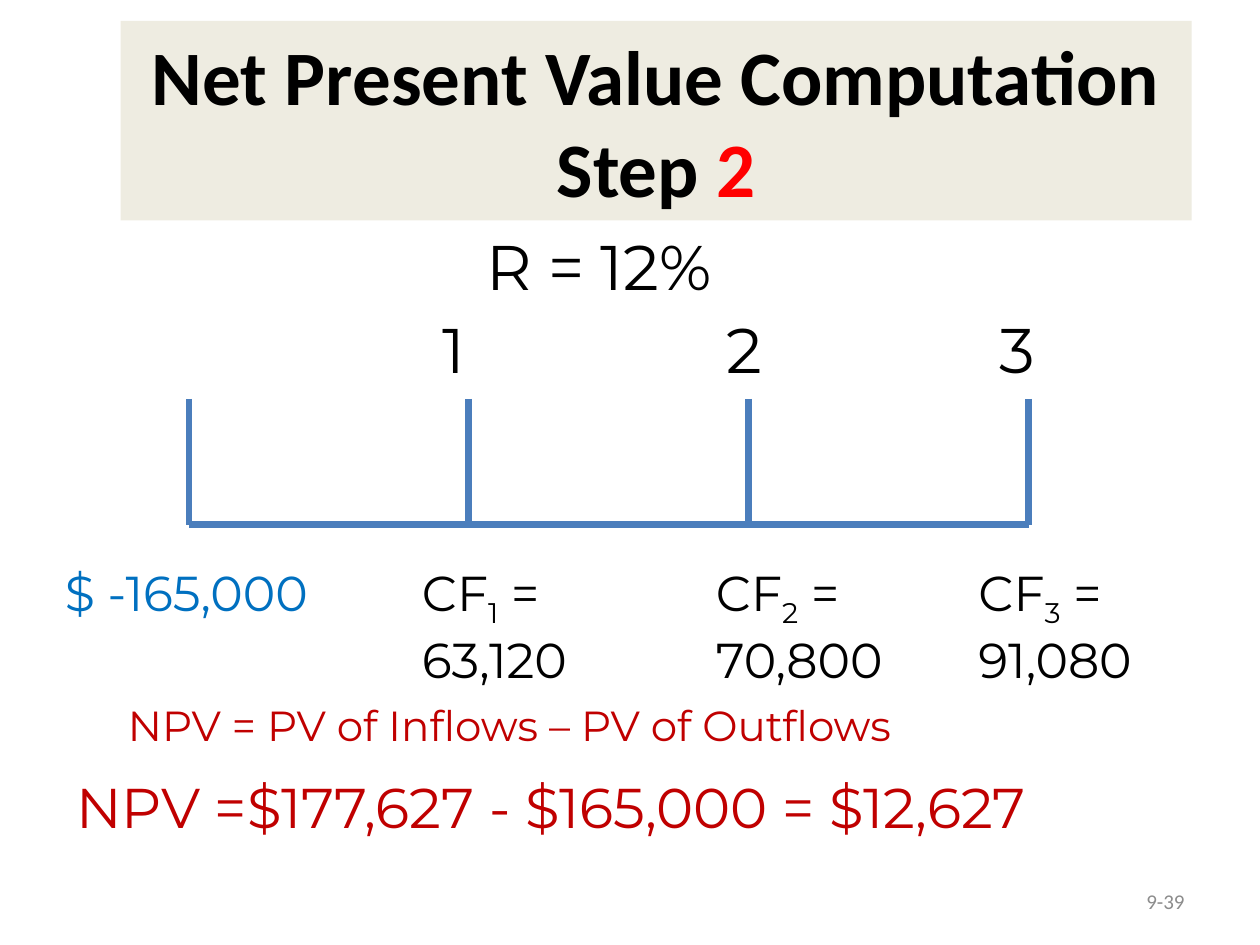
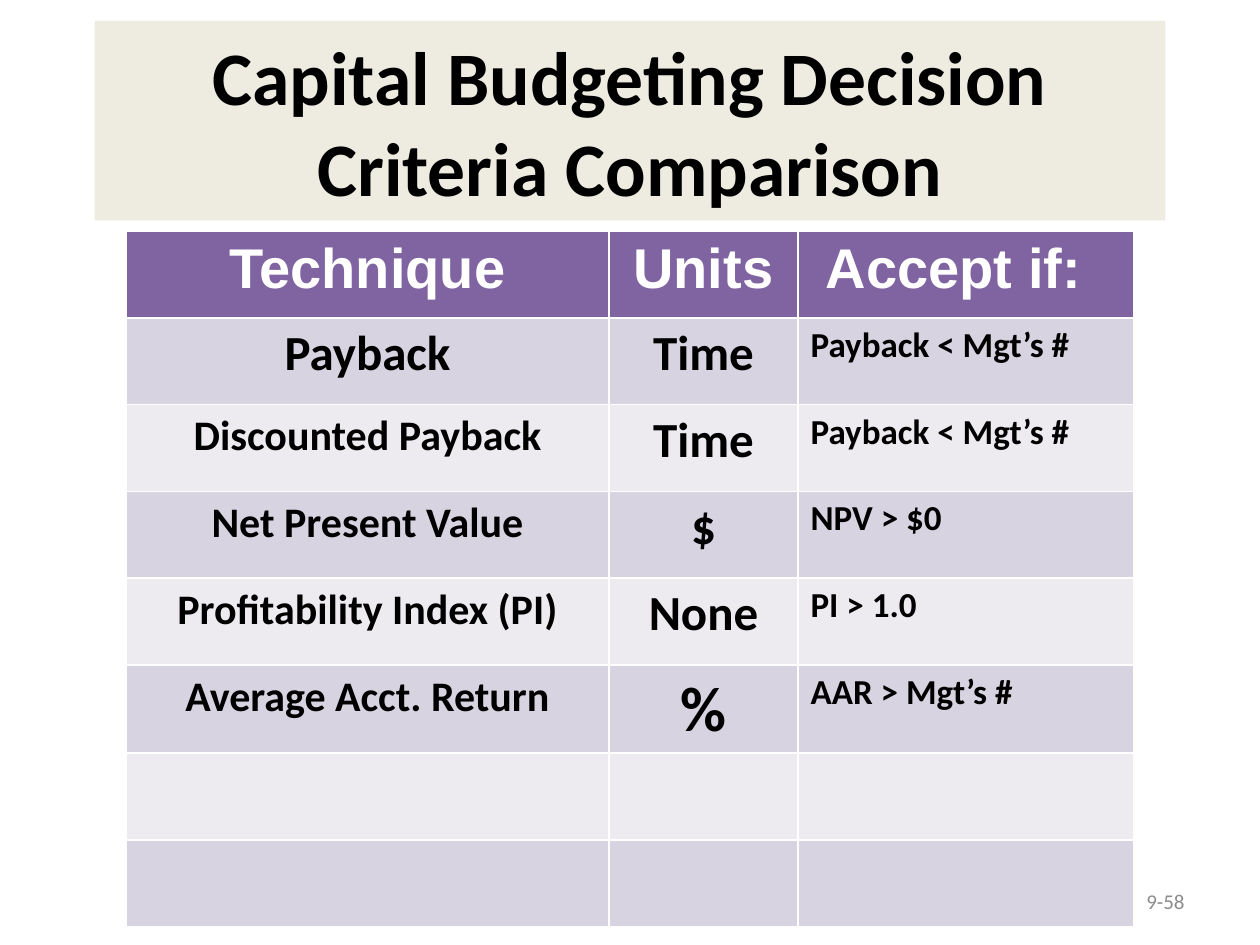
from pptx import Presentation
from pptx.dml.color import RGBColor
from pptx.enum.shapes import MSO_CONNECTOR
from pptx.enum.text import MSO_ANCHOR, MSO_AUTO_SIZE, PP_ALIGN
from pptx.oxml.ns import qn
from pptx.util import Pt
from lxml import etree

LEFT, MID, RIGHT = PP_ALIGN.LEFT, PP_ALIGN.CENTER, PP_ALIGN.RIGHT
TOP, CENTER = MSO_ANCHOR.TOP, MSO_ANCHOR.MIDDLE
NO_FIT = MSO_AUTO_SIZE.NONE
STRAIGHT = MSO_CONNECTOR.STRAIGHT

BLACK = RGBColor(0x00, 0x00, 0x00)
WHITE = RGBColor(0xFF, 0xFF, 0xFF)
RED = RGBColor(0xFF, 0x00, 0x00)
CRIMSON = RGBColor(0xC0, 0x00, 0x00)
BLUE = RGBColor(0x00, 0x70, 0xC0)
STEEL = RGBColor(0x4B, 0x7E, 0xBC)
GRAY = RGBColor(0x8C, 0x8C, 0x8C)
CREAM = RGBColor(0xEE, 0xEC, 0xE1)
PURPLE = RGBColor(0x80, 0x64, 0xA2)
BANDS = RGBColor(0xD8, 0xD3, 0xE0), RGBColor(0xED, 0xEA, 0xF0)

HEAD = {"name": "Calibri", "size": Pt(44), "bold": True, "color": BLACK}
BODY = {"name": "Montserrat", "size": Pt(28), "color": BLACK}
NUMBER = {"name": "Calibri", "size": Pt(12), "color": GRAY}
CELL = {"name": "Calibri", "size": Pt(20), "bold": True, "color": BLACK}
TOP_CELL = {"name": "Arial", "size": Pt(32), "bold": True, "color": WHITE}


def place(shape, box):
    for key, value in zip(("left", "top", "width", "height"), box):
        setattr(shape, key, Pt(value))


def write(para, text, style, **extra):
    """Add a run, formatted by the style and any changes to it."""
    run = para.add_run()
    run.text = text
    for key, value in {**style, **extra}.items():
        if key == "color":
            run.font.color.rgb = value
        else:
            setattr(run.font, key, value)
    return run


class Deck:
    def __init__(self):
        self.show = Presentation()
        self.show.slide_width, self.show.slide_height = Pt(720), Pt(540)
        self.slide = None

    def page(self, left, number, parts, size=44):
        """Start a slide with its title band and page number."""
        self.slide = self.show.slides.add_slide(self.show.slide_layouts[5])
        title = self.slide.shapes.title
        place(title, (left, 12, 612, 114))
        title.fill.solid()
        title.fill.fore_color.rgb = CREAM
        frame = title.text_frame
        frame.auto_size, frame.vertical_anchor = NO_FIT, CENTER
        para = frame.paragraphs[0]
        para.alignment = MID
        for text, color in parts:
            write(para, text, HEAD, size=Pt(size), color=color)
        self.text((516, 500.5, 168, 28.75), number, NUMBER, RIGHT, CENTER)

    def text(self, box, text, style=BODY, align=LEFT, anchor=TOP, **extra):
        frame = self.slide.shapes.add_textbox(*map(Pt, box)).text_frame
        frame.word_wrap, frame.vertical_anchor = True, anchor
        para = frame.paragraphs[0]
        para.alignment = align
        write(para, text, style, **extra)
        return para

    def flow(self, left, width, step, cash):
        """Add a cash flow with its period as a subscript."""
        para = self.text((left, 318, width, 75), "CF")
        sub = write(para, str(step), BODY)
        sub._r.get_or_add_rPr().set("baseline", "-25000")
        write(para, f" = {cash}", BODY)

    def line(self, *ends):
        line = self.slide.shapes.add_connector(STRAIGHT, *map(Pt, ends))
        line.line.color.rgb, line.line.width = STEEL, Pt(4)
        etree.SubElement(line._element.spPr, qn("a:effectLst"))

    def table(self, box, widths, rows):
        grid = self.slide.shapes.add_table(
            len(rows), len(widths), *map(Pt, box)).table
        for col, width in zip(grid.columns, widths):
            col.width = Pt(width)
        for i, row in enumerate(rows):
            grid.rows[i].height = Pt(box[3] / len(rows))
            for j in range(len(widths)):
                cell = grid.cell(i, j)
                cell.fill.solid()
                cell.fill.fore_color.rgb = BANDS[(i - 1) % 2] if i else PURPLE
                if row:
                    text, size = row[j]
                    para = cell.text_frame.paragraphs[0]
                    para.alignment = MID if j < 2 else LEFT
                    write(para, text, CELL if i else TOP_CELL, size=Pt(size))
        return grid


def value_slide(deck):
    deck.page(69, "9-39", [("Net Present Value Computation Step ", BLACK),
                           ("2", RED)])
    deck.text((270.75, 126.75, 216, 51), "R = 12%", size=Pt(36))
    deck.text((30, 318, 174, 41), "$ -165,000", color=BLUE)

    start, gap, top, base = 108, 160, 228, 300
    deck.line(start, base, start + 3 * gap, base)
    for step in range(4):
        x = start + step * gap
        deck.line(x, top, x, base)

    marks = [(246, 48), (408, 66), (564, 60)]
    flows = [(234, 168, "63,120"), (402, 120, "70,800"), (552, 126, "91,080")]
    for step, (mark, flow) in enumerate(zip(marks, flows), 1):
        left, width = mark
        deck.text((left, 174, width, 51), str(step), size=Pt(36))
        left, width, cash = flow
        deck.flow(left, width, step, cash)

    deck.text((36.5, 438, 683, 46), "NPV =$177,627 - $165,000 = $12,627",
              size=Pt(32), color=CRIMSON)
    deck.text((66, 396, 564, 36.5), "NPV = PV of Inflows – PV of Outflows",
              size=Pt(24), color=CRIMSON)


def table_slide(deck):
    deck.page(54, "9-58", [("Capital Budgeting Decision Criteria Comparison",
                            BLACK)], 43.2)
    rows = [
        [("Technique", 32), ("Units", 32), ("Accept if:", 32)],
        [("Payback", 28), ("Time", 28), ("Payback < Mgt’s #", 20)],
        [("Discounted Payback", 24), ("Time", 28), ("Payback < Mgt’s #", 20)],
        [("Net Present Value", 24), ("$", 28), ("NPV > $0", 20)],
        [("Profitability Index (PI)", 24), ("None", 28), ("PI > 1.0", 20)],
        [("Average Acct. Return", 24), ("%", 36), ("AAR > Mgt’s #", 20)],
        [], [],
    ]
    grid = deck.table((72, 132, 576, 396.8), (276, 108, 192), rows)
    grid.cell(0, 2).margin_left = Pt(16)


def main():
    deck = Deck()
    value_slide(deck)
    table_slide(deck)
    deck.show.save("out.pptx")


if __name__ == "__main__":
    main()
